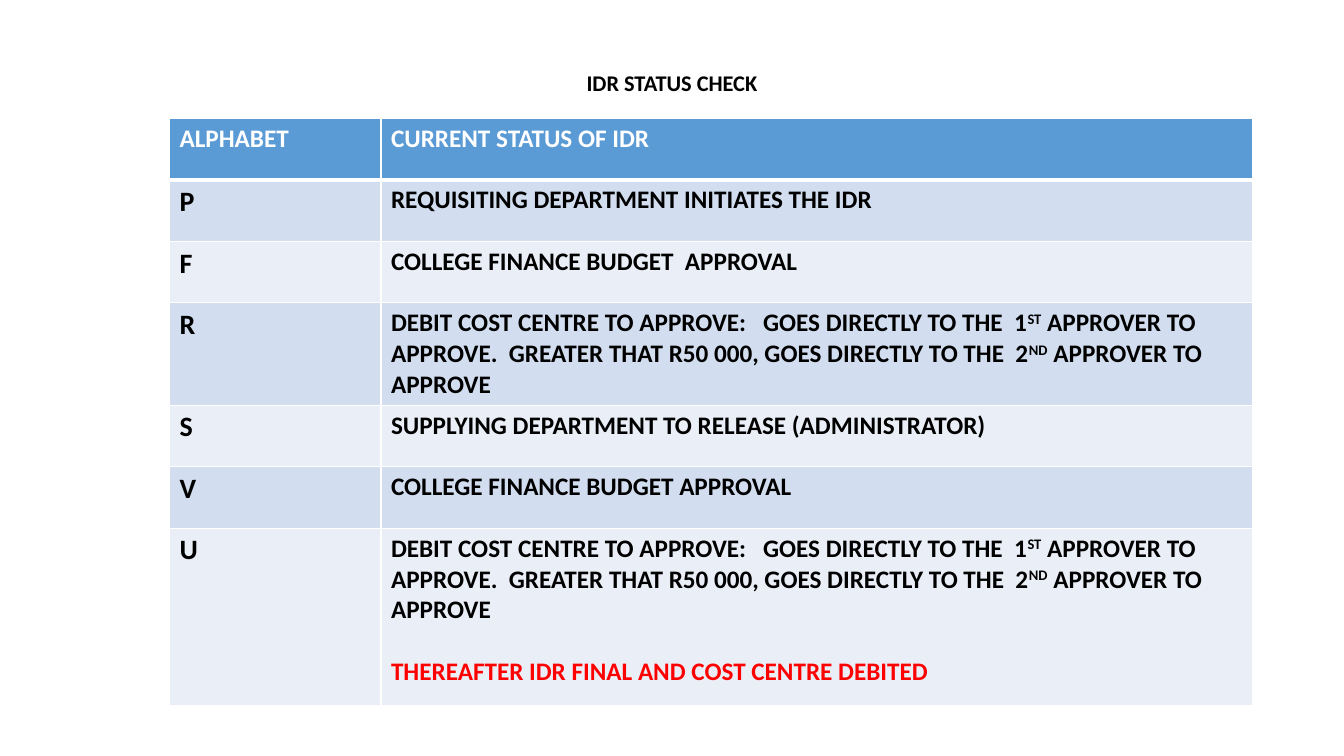
from lxml import etree
from pptx import Presentation
from pptx.dml.color import RGBColor
from pptx.enum.text import MSO_ANCHOR, PP_ALIGN
from pptx.oxml.ns import qn
from pptx.util import Cm, Pt

MIDDLE = MSO_ANCHOR.MIDDLE
CENTER = PP_ALIGN.CENTER
COLORS = {
    "head": "5B9BD5",
    "odd": "D2DEEF",
    "even": "EAEFF7",
    "white": "FFFFFF",
    "black": "000000",
    "red": "FF0000",
}
FONT = {"name": "Calibri", "bold": True}
COLS = (5.33, 21.97)
LOW, MID, HIGH = 1.55, 2.36, 4.47
DEBIT = (
    "DEBIT COST CENTRE TO APPROVE:   GOES DIRECTLY TO THE  1^ST^ APPROVER TO "
    "APPROVE.  GREATER THAT R50 000, GOES DIRECTLY TO THE  2^ND^ APPROVER TO APPROVE"
)
FINAL = "THEREAFTER IDR FINAL AND COST CENTRE DEBITED"
ROWS = (
    ("ALPHABET", "CURRENT STATUS OF IDR", LOW),
    ("P", "REQUISITING DEPARTMENT INITIATES THE IDR", LOW),
    ("F", "COLLEGE FINANCE BUDGET  APPROVAL", LOW),
    ("R", DEBIT, MID),
    ("S", "SUPPLYING DEPARTMENT TO RELEASE (ADMINISTRATOR)", LOW),
    ("V", "COLLEGE FINANCE BUDGET APPROVAL", LOW),
    ("U", DEBIT, HIGH),
)


def rgb(name):
    return RGBColor.from_string(COLORS[name])


def write(para, text, size, color):
    for i, part in enumerate(text.split("^")):
        run = para.add_run()
        run.text = part
        for key, value in {**FONT, "size": Pt(size)}.items():
            setattr(run.font, key, value)
        run.font.color.rgb = rgb(color)
        if i % 2:
            run._r.get_or_add_rPr().set("baseline", "30000")


def edge(cell, row):
    props = cell._tc.get_or_add_tcPr()
    widths = {"lnL": 1, "lnR": 1, "lnT": 3 if row == 1 else 1, "lnB": 1 if row else 3}
    for i, (tag, width) in enumerate(widths.items()):
        line = etree.Element(qn("a:" + tag), w=str(Pt(width)))
        fill = etree.SubElement(line, qn("a:solidFill"))
        etree.SubElement(fill, qn("a:srgbClr"), val=COLORS["white"])
        props.insert(i, line)


def add_title(slide, box):
    title = slide.shapes.title
    for key, value in zip(("left", "top", "width", "height"), box):
        setattr(title, key, Cm(value))
    frame = title.text_frame
    frame.vertical_anchor = MIDDLE
    para = frame.paragraphs[0]
    para.alignment = CENTER
    para.line_spacing = 0.9
    write(para, "IDR STATUS CHECK", 16, "black")


def add_grid(slide, box):
    frame = slide.shapes.add_table(len(ROWS), len(COLS), *map(Cm, box))
    table = frame.table
    for col, width in zip(table.columns, COLS):
        col.width = Cm(width)
    for r, (*texts, height) in enumerate(ROWS):
        table.rows[r].height = Cm(height)
        shade = ("odd" if r % 2 else "even") if r else "head"
        for c, text in enumerate(texts):
            cell = table.cell(r, c)
            cell.fill.solid()
            cell.fill.fore_color.rgb = rgb(shade)
            edge(cell, r)
            size = 20 if r and c == 0 else 18
            write(cell.text_frame.paragraphs[0], text, size, "black" if r else "white")
    para = table.cell(len(ROWS) - 1, 1).text_frame.add_paragraph()
    para.space_before = Pt(22)
    write(para, FINAL, 18, "red")
    frame.height = Cm(box[3])


def main():
    deck = Presentation()
    deck.slide_width, deck.slide_height = Cm(33.87), Cm(19.05)
    slide = deck.slides.add_slide(deck.slide_layouts[5])
    add_title(slide, (2.33, 1.02, 29.21, 2.21))
    add_grid(slide, (4.27, 2.98, sum(COLS), 15.09))
    deck.save("out.pptx")


if __name__ == "__main__":
    main()
